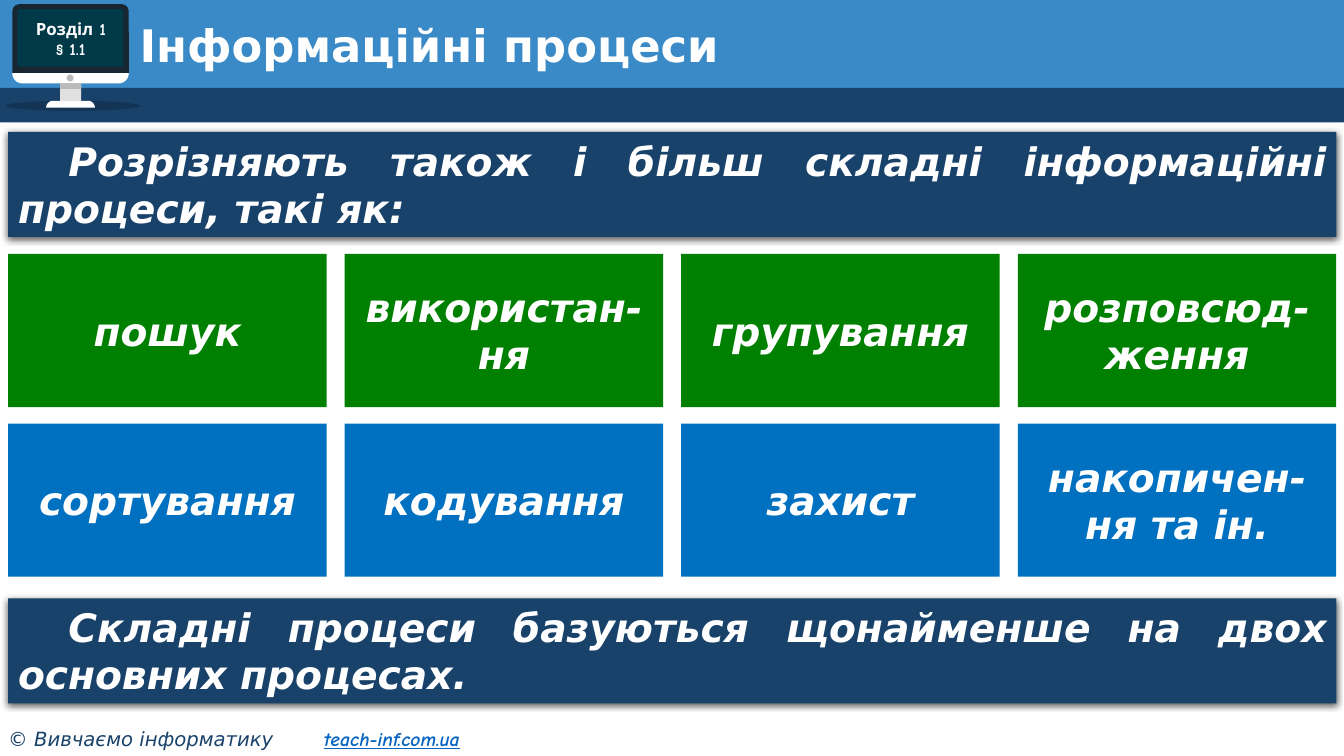
"""Build the slide about complex information processes."""
import math
import pptx
import pptx.dml.color
import pptx.enum.shapes
import pptx.enum.text
import pptx.oxml
import pptx.oxml.ns
import pptx.util

Pt = pptx.util.Pt
Kind = pptx.enum.shapes.MSO_SHAPE
Align = pptx.enum.text.PP_ALIGN
Anchor = pptx.enum.text.MSO_ANCHOR
Fit = pptx.enum.text.MSO_AUTO_SIZE
RGB = pptx.dml.color.RGBColor.from_string
qn = pptx.oxml.ns.qn
space = pptx.oxml.ns.nsdecls("a")


class Theme:
    sky, navy, green, blue = "398AC7", "19426B", "008000", "0070C0"
    white, black, link = "FFFFFF", "000000", "0563C1"
    frame, glass, neck, shade = "182632", "003948", "E1E1E1", "BBBBBB"
    main, hand = "DejaVu Sans", "Comic Neue"
    title, body, foot, badge = 32, 28, 14, 12


def paint(shape, colour):
    shape.shadow.inherit = False
    shape.fill.solid()
    shape.fill.fore_color.rgb = RGB(colour)
    shape.line.fill.background()


def style(font, size, colour, face=Theme.main, bold=True, italic=False):
    font.size = Pt(size)
    font.name = face
    font.bold = bold
    font.italic = italic
    font.color.rgb = RGB(colour)


deck = pptx.Presentation()
deck.slide_width, deck.slide_height = Pt(960), Pt(540)
slide = deck.slides.add_slide(deck.slide_layouts[5])
shapes = slide.shapes

parts = [
    (Kind.RECTANGLE, 0, 0, 960, 65.5, Theme.sky),
    (Kind.RECTANGLE, 0, 62.8, 960, 24.6, Theme.navy),
    (Kind.OVAL, 3.6, 72, 96.4, 7.2, Theme.black),
    (Kind.ROUND_2_SAME_RECTANGLE, 8.8, 3, 83.2, 49.4, Theme.frame),
    (Kind.RECTANGLE, 43, 59.5, 15, 12.5, Theme.neck),
    (Kind.RECTANGLE, 43, 59.5, 15, 4, Theme.shade),
    (Kind.OVAL, 47.6, 53.2, 5, 5, Theme.shade),
    (Kind.ROUNDED_RECTANGLE, 12.4, 6.6, 75.8, 41, Theme.glass),
]
curves = [(8.8, 92, 52.3, 7.3), (33, 67.8, 77, -5)]

for edge, far, base, rise in curves:
    turn = [math.radians(step * 7.5) for step in range(13)]
    curve = abs(rise)
    right = [(far - curve + curve * math.cos(a), base + rise * math.sin(a))
             for a in turn]
    left = [(edge + far - x, y) for x, y in reversed(right)]
    draft = shapes.build_freeform(Pt(edge), Pt(base))
    draft.add_line_segments([(Pt(x), Pt(y)) for x, y in right + left])
    paint(draft.convert_to_shape(), Theme.white)

lower = [shape.element for shape in shapes if shape != shapes.title]
for kind, x, y, w, h, colour in parts:
    part = shapes.add_shape(kind, Pt(x), Pt(y), Pt(w), Pt(h))
    paint(part, colour)
    if kind == Kind.ROUNDED_RECTANGLE:
        part.adjustments[0] = 0.04
    if kind == Kind.ROUND_2_SAME_RECTANGLE:
        part.adjustments[0] = 0.1
        for curve in lower:
            part.element.addnext(curve)
    if colour == Theme.black:
        tint = part.element.spPr.find(".//" + qn("a:srgbClr"))
        tint.append(pptx.oxml.parse_xml(f'<a:alpha {space} val="20000"/>'))

badge = shapes.add_textbox(Pt(9.2), Pt(6.5), Pt(82.8), Pt(42.5)).text_frame
badge.word_wrap = True
badge.vertical_anchor = Anchor.MIDDLE
badge.text = "Розділ 1\n§ 1.1"
for para in badge.paragraphs:
    para.alignment = Align.CENTER
    style(para.font, Theme.badge, Theme.white, Theme.hand)

title = shapes.title
title.element.getparent().append(title.element)
title.left, title.top, title.width, title.height = Pt(92.5), Pt(13), Pt(713), Pt(42)
title.text = "Інформаційні процеси"
title.text_frame.auto_size = Fit.NONE
title.text_frame.vertical_anchor = Anchor.MIDDLE
para = title.text_frame.paragraphs[0]
para.alignment = Align.LEFT
para.line_spacing = 0.9
style(para.font, Theme.title, Theme.white)

panels = [
    (94.3, "Розрізняють також і більш складні інформаційні процеси, такі як:"),
    (427.5, "Складні процеси базуються щонайменше на двох основних процесах."),
]
rows = [
    (Theme.green, ["пошук", "використан-ня", "групування", "розповсюд-ження"]),
    (Theme.blue, ["сортування", "кодування", "захист", "накопичен-ня та ін."]),
]
tiles = [(5.8, y, 948.8, 75, Theme.navy, text) for y, text in panels]
tiles += [(5.8 + 240.4 * col, 181.4 + 121.2 * row, 227.5, 109.4, colour, text)
          for row, (colour, words) in enumerate(rows)
          for col, text in enumerate(words)]

for x, y, w, h, colour, text in tiles:
    tile = shapes.add_shape(Kind.RECTANGLE, Pt(x), Pt(y), Pt(w), Pt(h))
    paint(tile, colour)
    tile.text_frame.word_wrap = True
    tile.text_frame.text = text
    tile.text_frame.vertical_anchor = Anchor.MIDDLE
    para = tile.text_frame.paragraphs[0]
    para.alignment = Align.CENTER
    style(para.font, Theme.body, Theme.white, italic=True)
    if colour == Theme.navy:
        tile.text_frame.vertical_anchor = Anchor.TOP
        para.alignment = Align.JUSTIFY
        para._p.get_or_add_pPr().set("indent", str(Pt(36)))
        tile.element.spPr.find(qn("a:effectLst")).append(pptx.oxml.parse_xml(
            f'<a:outerShdw {space} blurRad="{Pt(4.5)}" dist="{Pt(1.5)}" '
            f'dir="5400000" rotWithShape="0"><a:srgbClr val="{Theme.black}">'
            '<a:alpha val="63000"/></a:srgbClr></a:outerShdw>'))

foot = shapes.add_textbox(Pt(-1.2), Pt(515.5), Pt(376.5), Pt(24.5)).text_frame
foot.word_wrap = True
para = foot.paragraphs[0]
para._p.get_or_add_pPr().append(pptx.oxml.parse_xml(
    f'<a:tabLst {space}><a:tab pos="{Pt(225.4)}" algn="l"/></a:tabLst>'))
owner = para.add_run()
owner.text = "© Вивчаємо інформатику\t"
style(owner.font, Theme.foot, Theme.navy, bold=False, italic=True)
site = para.add_run()
site.text = "teach-inf.com.ua"
style(site.font, Theme.foot, Theme.link, Theme.hand, italic=True)
site.font.underline = True

deck.save("out.pptx")
